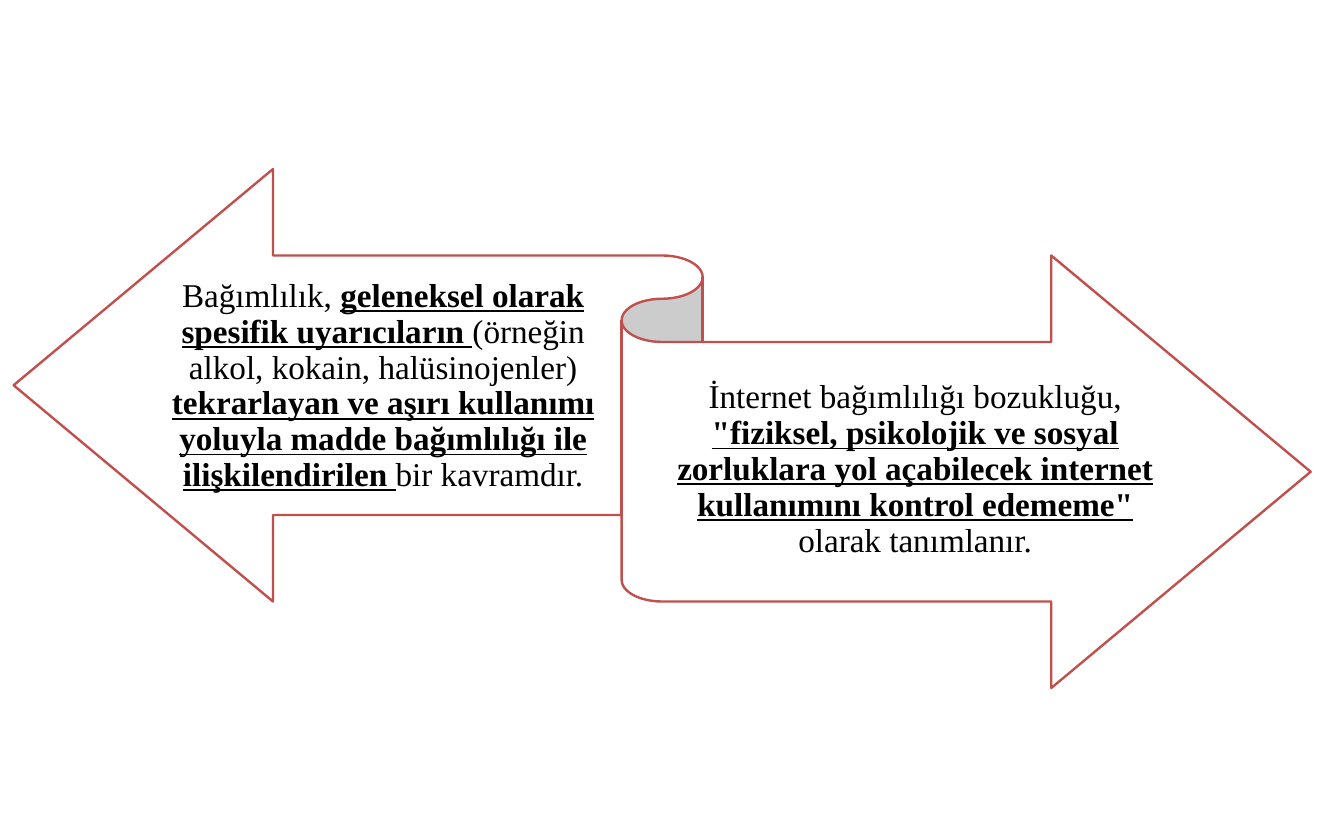
from pptx import Presentation
from pptx.dml.color import RGBColor
from pptx.enum.shapes import MSO_SHAPE as Shape
from pptx.enum.text import MSO_ANCHOR as Anchor, PP_ALIGN as Align
from pptx.util import Inches, Pt

# Each run: wording, stressed or not
HABIT = [
    ("Bağımlılık, ", False),
    ("geleneksel olarak spesifik uyarıcıların ", True),
    ("(örneğin alkol, kokain, halüsinojenler) ", False),
    ("tekrarlayan ve aşırı kullanımı yoluyla madde bağımlılığı ile "
     "ilişkilendirilen ", True),
    ("bir kavramdır.", False),
]
NET = [
    ("İnternet bağımlılığı bozukluğu, ", False),
    ('"fiziksel, psikolojik ve sosyal zorluklara yol açabilecek internet '
     'kullanımını kontrol edememe" ', True),
    ("olarak tanımlanır.", False),
]


def color(code):
    return RGBColor.from_string(code)


def add_ribbon(slide, *box):
    ribbon = slide.shapes.add_shape(Shape.LEFT_RIGHT_RIBBON, *map(Inches, box))
    ribbon.shadow.inherit = False
    ribbon.fill.solid()
    ribbon.fill.fore_color.rgb = color("FFFFFF")
    ribbon.line.color.rgb = color("C0504D")
    ribbon.line.width = Pt(2)


def add_text(slide, parts, *box):
    frame = slide.shapes.add_textbox(*map(Inches, box)).text_frame
    frame.word_wrap = True
    frame.vertical_anchor = Anchor.MIDDLE
    frame.margin_left = frame.margin_right = 0
    frame.margin_top, frame.margin_bottom = Inches(0.11), Inches(0.12)
    para = frame.paragraphs[0]
    para.alignment = Align.CENTER
    para.line_spacing = 0.9
    for words, stress in parts:
        run = para.add_run()
        run.text = words
        font = run.font
        font.name, font.size = "Times New Roman", Pt(28)
        font.color.rgb = color("000000")
        font.bold = font.underline = stress


def main():
    deck = Presentation()
    deck.slide_width, deck.slide_height = Inches(15.75), Inches(9.84)
    slide = deck.slides.add_slide(deck.slide_layouts[6])

    # Two-way ribbon
    add_ribbon(slide, 0.16, 1.98, 15.2, 6.08)

    # Definitions on the two arms
    add_text(slide, HABIT, 1.98, 3.04, 5.02, 2.98)
    add_text(slide, NET, 7.76, 4.02, 5.93, 2.98)

    deck.save("out.pptx")


if __name__ == "__main__":
    main()
